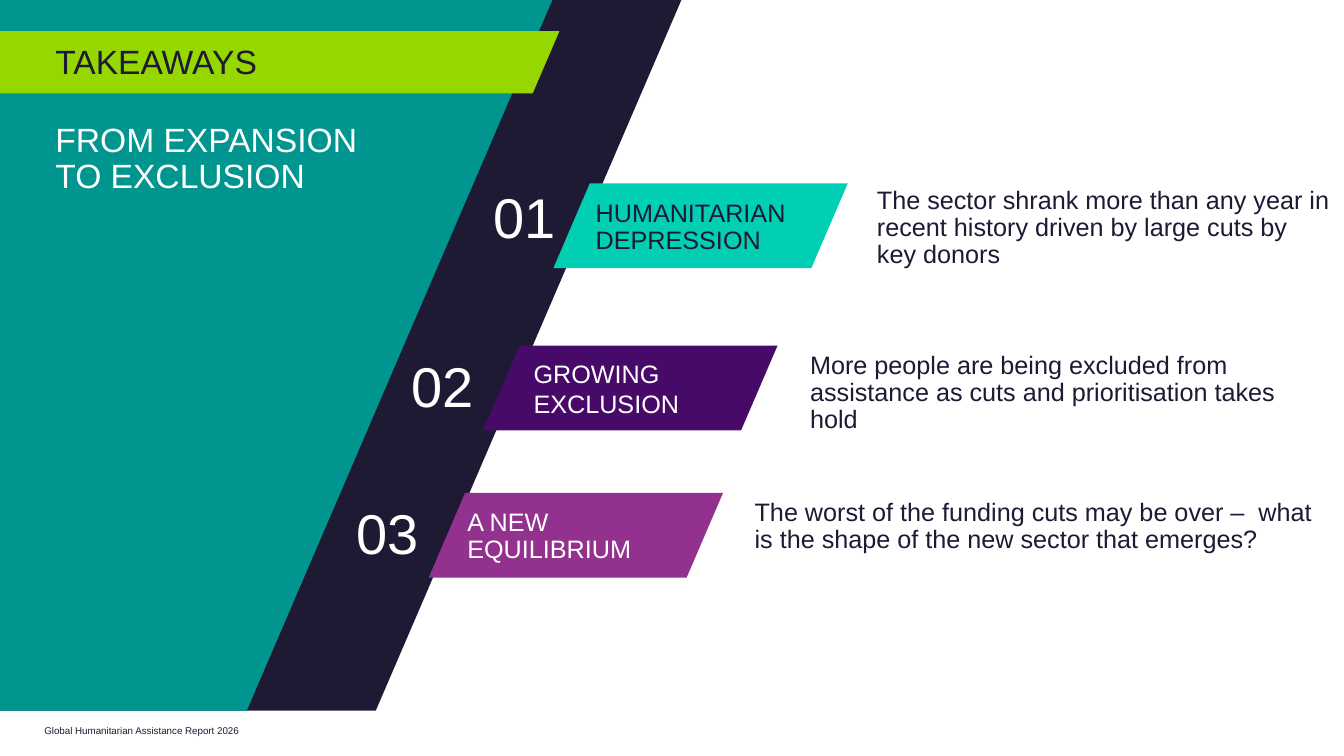
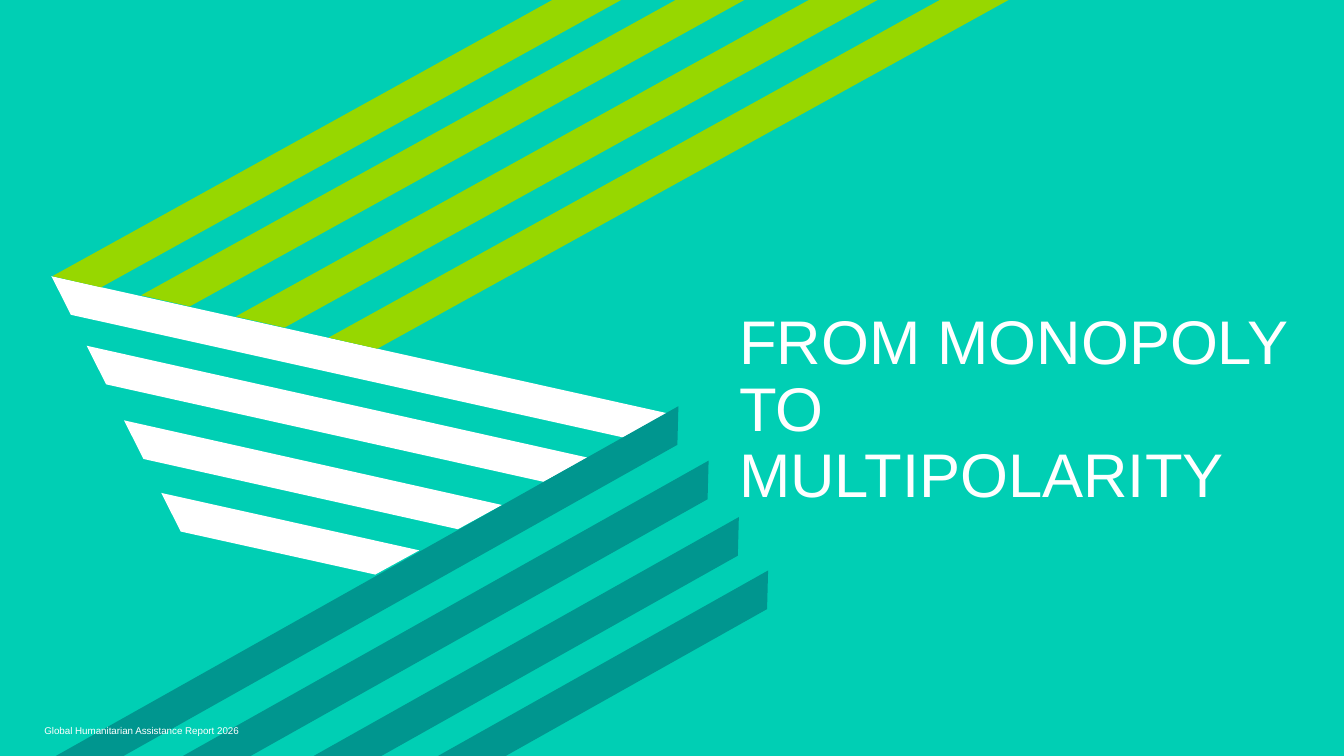
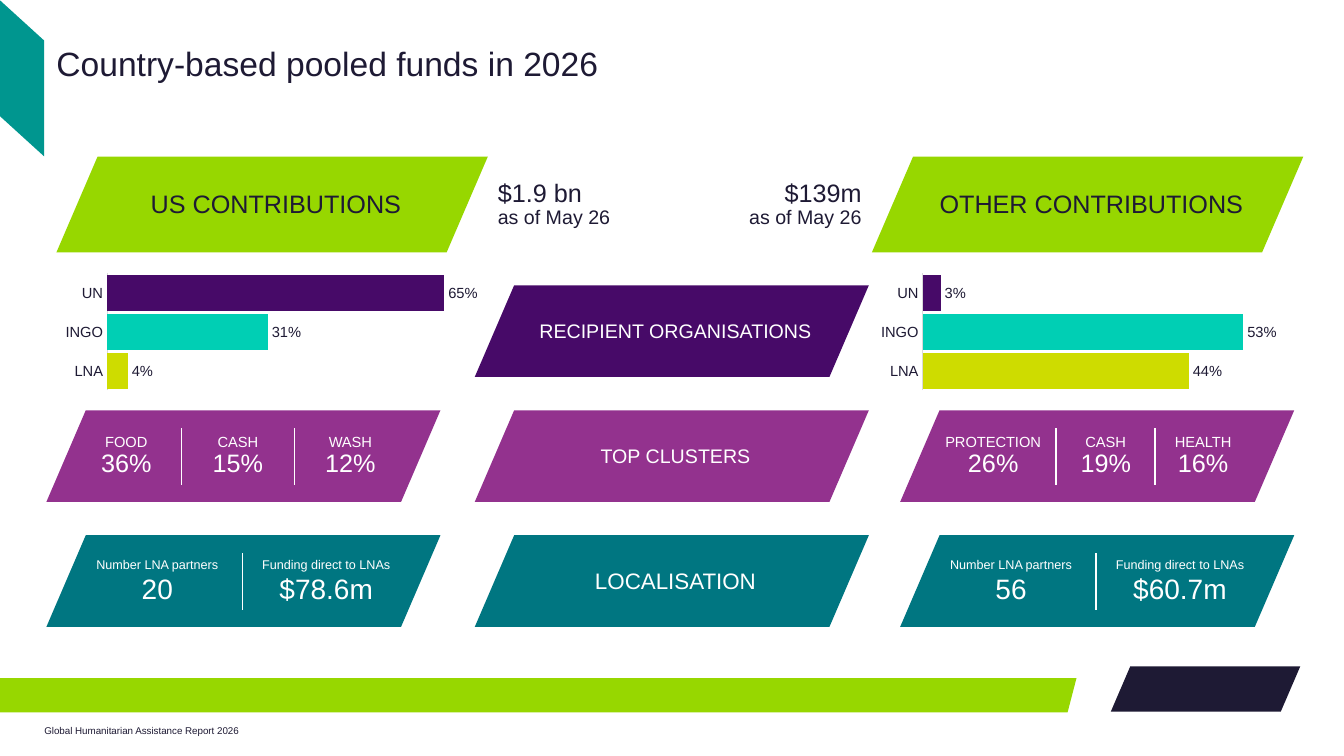
import pptx
import pptx.chart.data
import pptx.dml.color
import pptx.enum.chart
import pptx.enum.shapes
import pptx.enum.text
import pptx.oxml
import pptx.oxml.ns
import pptx.util

RGB = pptx.dml.color.RGBColor
NAVY = RGB(0x1E, 0x1A, 0x34)
TEAL = RGB(0x00, 0x96, 0x8F)
LIME = RGB(0x97, 0xD7, 0x00)
MINT = RGB(0x00, 0xCF, 0xB4)
VIOLET = RGB(0x47, 0x0A, 0x68)
PLUM = RGB(0x93, 0x32, 0x8E)
PETROL = RGB(0x00, 0x76, 0x81)
CITRON = RGB(0xCE, 0xDC, 0x00)
GREY = RGB(0xD9, 0xD9, 0xD9)
WHITE = RGB(0xFF, 0xFF, 0xFF)

FONT = "Arial"
COLS, ROWS = 40, 22.5
CELL = 304800
SLANT = 0.43
PRESET = pptx.enum.shapes.MSO_SHAPE
ALIGN = pptx.enum.text.PP_ALIGN
ANCHOR = pptx.enum.text.MSO_ANCHOR


def cells(*values):
    return [pptx.util.Emu(round(v * CELL)) for v in values]


def new_slide(prs):
    return prs.slides.add_slide(prs.slide_layouts[6])


def add_footer(s, color):
    add_text(s, (1.32, 21.57, 13.5, 0.9),
             [("Global Humanitarian Assistance Report 2026", 7)], color, spacing=1)


def paint(sp, color):
    sp.shadow.inherit = False
    sp.fill.solid()
    sp.fill.fore_color.rgb = color
    sp.line.fill.background()


def add_slanted(s, at, color, slant=SLANT, rotation=0):
    sp = s.shapes.add_shape(PRESET.PARALLELOGRAM, *cells(*at))
    sp.adjustments[0] = slant
    sp.rotation = rotation
    paint(sp, color)


def add_polygon(s, points, color):
    start, *rest = [cells(*point) for point in points]
    fb = s.shapes.build_freeform(*start, scale=1.0)
    fb.add_line_segments(rest, close=True)
    paint(fb.convert_to_shape(), color)


def add_text(s, at, lines, color, align=ALIGN.LEFT, anchor=ANCHOR.TOP,
             spacing=0.9, padded=False):
    tf = s.shapes.add_textbox(*cells(*at)).text_frame
    tf.word_wrap = True
    tf.vertical_anchor = anchor
    if not padded:
        tf.margin_left = tf.margin_right = tf.margin_top = tf.margin_bottom = 0
    for i, (text, size) in enumerate(lines):
        p = tf.paragraphs[0] if i == 0 else tf.add_paragraph()
        p.alignment = align
        p.line_spacing = spacing
        r = p.add_run()
        r.text = text
        r.font.name = FONT
        r.font.size = pptx.util.Pt(size)
        r.font.color.rgb = color


def add_divider(s, x, top, bottom):
    ln = s.shapes.add_connector(pptx.enum.shapes.MSO_CONNECTOR.STRAIGHT,
                                *cells(x, top, x, bottom))
    ln.line.color.rgb = WHITE
    ln.line.width = pptx.util.Pt(1)
    ln._element.spPr.append(pptx.oxml.parse_xml(
        "<a:effectLst %s/>" % pptx.oxml.ns.nsdecls("a")))


def add_banner(s, at, label, size, fill, color=WHITE):
    x, y, w, h = at
    add_slanted(s, at, fill)
    add_text(s, (x + 0.12 * w + 0.05, y + 0.04, 0.77 * w, h), [(label, size)], color,
             ALIGN.CENTER, ANCHOR.MIDDLE)


def add_stats(s, at, fill, stats, dividers, sizes, width, spacing):
    x, y, w, h = at
    add_slanted(s, at, fill)
    for center, label, value in stats:
        add_text(s, (x + center - width / 2, y + 0.5, width, 1.73),
                 list(zip((label, value), sizes)), WHITE,
                 ALIGN.CENTER, ANCHOR.MIDDLE, spacing, padded=True)
    for offset in dividers:
        add_divider(s, x + offset, y + 0.54, y + 2.22)


def style_font(font):
    font.name = FONT
    font.size = pptx.util.Pt(10.5)
    font.color.rgb = NAVY


def add_bars(s, at, values, top_value):
    cd = pptx.chart.data.CategoryChartData(number_format="0%")
    cd.categories = ["UN", "INGO", "LNA"]
    cd.add_series("Series 1", values)
    ch = s.shapes.add_chart(pptx.enum.chart.XL_CHART_TYPE.BAR_CLUSTERED,
                            *cells(*at), cd).chart
    ch.has_legend = ch.has_title = False
    style_font(ch.font)

    ca = ch.category_axis
    ca.reverse_order = True
    ca.major_tick_mark = pptx.enum.chart.XL_TICK_MARK.NONE
    ca.format.line.color.rgb = GREY
    ca.format.line.width = pptx.util.Pt(0.75)
    style_font(ca.tick_labels.font)
    va = ch.value_axis
    va.minimum_scale, va.maximum_scale = 0, top_value
    va.has_major_gridlines = False
    va.visible = False

    plot = ch.plots[0]
    plot.gap_width = 8
    plot.vary_by_categories = False
    for i, color in enumerate((VIOLET, MINT, CITRON)):
        fill = plot.series[0].points[i].format.fill
        fill.solid()
        fill.fore_color.rgb = color
    plot.has_data_labels = True
    dl = plot.data_labels
    dl.show_value = True
    dl.number_format, dl.number_format_is_linked = "0%", False
    dl.position = pptx.enum.chart.XL_LABEL_POSITION.OUTSIDE_END
    style_font(dl.font)

    area = ch._chartSpace.chart.plotArea
    for old in area.findall(pptx.oxml.ns.qn("c:layout")):
        area.remove(old)
    area.insert(0, pptx.oxml.parse_xml(
        "<c:layout %s><c:manualLayout><c:layoutTarget val='inner'/>"
        "<c:xMode val='edge'/><c:yMode val='edge'/><c:x val='0.12'/>"
        "<c:y val='0.03'/><c:w val='0.86'/><c:h val='0.95'/>"
        "</c:manualLayout></c:layout>" % pptx.oxml.ns.nsdecls("c")))


def add_takeaway(s, at, fill, color, label, label_offset, spacing, number,
                 number_offset, text, text_offset, text_width):
    def shifted(offset):
        return at[0] + offset[0], at[1] + offset[1]

    add_slanted(s, (*at, 8.76, 2.52), fill)
    add_text(s, (*shifted(label_offset), 6, 1.62), [(label, 18)], color, spacing=spacing)
    add_text(s, (*shifted(number_offset), 2.94, 2.31), [(number, 40)], WHITE,
             ALIGN.CENTER, spacing=1, padded=True)
    add_text(s, (*shifted(text_offset), text_width, 2.52), [(text, 18)], NAVY)


def takeaways_slide(prs):
    s = new_slide(prs)
    for width, color in ((29.55, NAVY), (25.71, TEAL)):
        add_slanted(s, (-9.27, 0, width, 21.15), color)
    add_slanted(s, (-0.99, 0.93, 17.64, 1.85), LIME)
    add_text(s, (1.65, 1.35, 10.68, 0.96), [("TAKEAWAYS", 24)], NAVY)
    add_text(s, (1.65, 3.68, 10.68, 3),
             [("FROM EXPANSION", 24), ("TO EXCLUSION", 24)], WHITE)
    add_takeaway(s, (16.47, 5.46), MINT, NAVY,
                 "HUMANITARIAN DEPRESSION", (1.26, 0.52), 0.9, "01", (-2.34, -0.18),
                 "The sector shrank more than any year in recent history "
                 "driven by large cuts by key donors", (9.63, 0.12), 13.56)
    add_takeaway(s, (14.38, 10.29), VIOLET, WHITE,
                 "GROWING EXCLUSION", (1.5, 0.38), 1, "02", (-2.68, 0.03),
                 "More people are being excluded from assistance as cuts "
                 "and prioritisation takes hold", (9.73, 0.2), 14)
    add_takeaway(s, (12.76, 14.67), PLUM, WHITE,
                 "A NEW EQUILIBRIUM", (1.15, 0.49), 0.9, "03", (-2.7, 0.03),
                 "The worst of the funding cuts may be over –  what is the "
                 "shape of the new sector that emerges?", (9.7, 0.2), 16.7)
    add_footer(s, NAVY)


def section_slide(prs):
    s = new_slide(prs)
    paint(s.shapes.add_shape(PRESET.RECTANGLE, *cells(0, 0, COLS, ROWS)), MINT)
    add_text(s, (22, 9.27, 17.37, 6), [("FROM MONOPOLY TO MULTIPOLARITY", 44)], WHITE)
    white_ends = [((1.53, 8.22), (19.86, 12.3)), ((2.58, 10.29), (17.49, 13.62)),
                  ((3.69, 12.51), (14.94, 15.03)), ((4.8, 14.67), (12.48, 16.38))]
    for (x1, y1), (x2, y2) in white_ends:
        add_polygon(s, [(x1, y1), (x1 + 0.58, y1 + 1.15),
                        (x2 - 1.31, y2 + 0.72), (x2, y2)], WHITE)
    run = 1.78
    for x, y in ((20.19, 12.09), (21.09, 13.71), (21.99, 15.39), (22.86, 16.98)):
        low_x, low_y = x - 0.03, y + 1.15
        add_polygon(s, [(x, y), (low_x, low_y), (low_x - run * (ROWS - low_y), ROWS),
                        (x - run * (ROWS - y), ROWS)], TEAL)
    run = 1.81
    for x, y in ((1.56, 8.22), (4.2, 8.79), (7.02, 9.42), (9.78, 10.05)):
        low_x, low_y = x + 1.45, y + 0.33
        add_polygon(s, [(x, y), (low_x, low_y), (low_x + run * low_y, 0),
                        (x + run * y, 0)], LIME)
    add_footer(s, WHITE)


def funds_slide(prs):
    s = new_slide(prs)
    add_slanted(s, (-1.67, 1.67, 4.65, 1.32), TEAL, 0.91, 270)
    add_text(s, (1.68, 1.28, 28.38, 1.08),
             [("Country-based pooled funds in 2026", 24)], NAVY, spacing=1)

    for x, width, align, amount in ((14.52, 5.28, ALIGN.LEFT, "$1.9 bn"),
                                    (20.21, 5.73, ALIGN.RIGHT, "$139m")):
        add_text(s, (x, 5.21, width, 1.77), [(amount, 18), ("as of May 26", 14)],
                 NAVY, align, ANCHOR.MIDDLE, padded=True)
    for x, label, values, top_value in (
            (1.68, "US CONTRIBUTIONS", (0.65, 0.31, 0.04), 0.7),
            (25.95, "OTHER CONTRIBUTIONS", (0.03, 0.53, 0.44), 0.6)):
        add_banner(s, (x, 4.66, 12.84, 2.85), label, 18, LIME, NAVY)
        add_bars(s, (x, 8.03, 12.57, 3.66), values, top_value)

    width, height = 11.73, 2.73
    rows = [8.49 + 3.72 * i for i in range(3)]
    for y, label, size, fill in zip(
            rows, ("RECIPIENT ORGANISATIONS", "TOP CLUSTERS", "LOCALISATION"),
            (14, 14, 16), (VIOLET, PLUM, PETROL)):
        add_banner(s, (14.13, y, width, height), label, size, fill)

    sides = [
        (1.38, [(2.38, "FOOD", "36%"), (5.7, "CASH", "15%"), (9.05, "WASH", "12%")],
         (4.02, 7.38), "20", "$78.6m"),
        (26.79, [(2.77, "PROTECTION", "26%"), (6.12, "CASH", "19%"),
                 (9.02, "HEALTH", "16%")], (4.64, 7.59), "56", "$60.7m"),
    ]
    for x, clusters, dividers, partners, funding in sides:
        add_stats(s, (x, rows[1], width, height), PLUM, clusters, dividers,
                  (10.5, 18), 3.72, 0.9)
        add_stats(s, (x, rows[2], width, height), PETROL,
                  [(3.3, "Number LNA partners", partners),
                   (8.33, "Funding direct to LNAs", funding)],
                  (5.83,), (9, 20), 5, 1)

    add_slanted(s, (-0.3, 20.18, 32.34, 1.02), LIME, 0.26)
    add_slanted(s, (33.06, 19.83, 5.64, 1.35), NAVY)
    add_footer(s, NAVY)


def main():
    prs = pptx.Presentation()
    prs.slide_width, prs.slide_height = cells(COLS, ROWS)
    takeaways_slide(prs)
    section_slide(prs)
    funds_slide(prs)
    prs.save("out.pptx")


if __name__ == "__main__":
    main()
